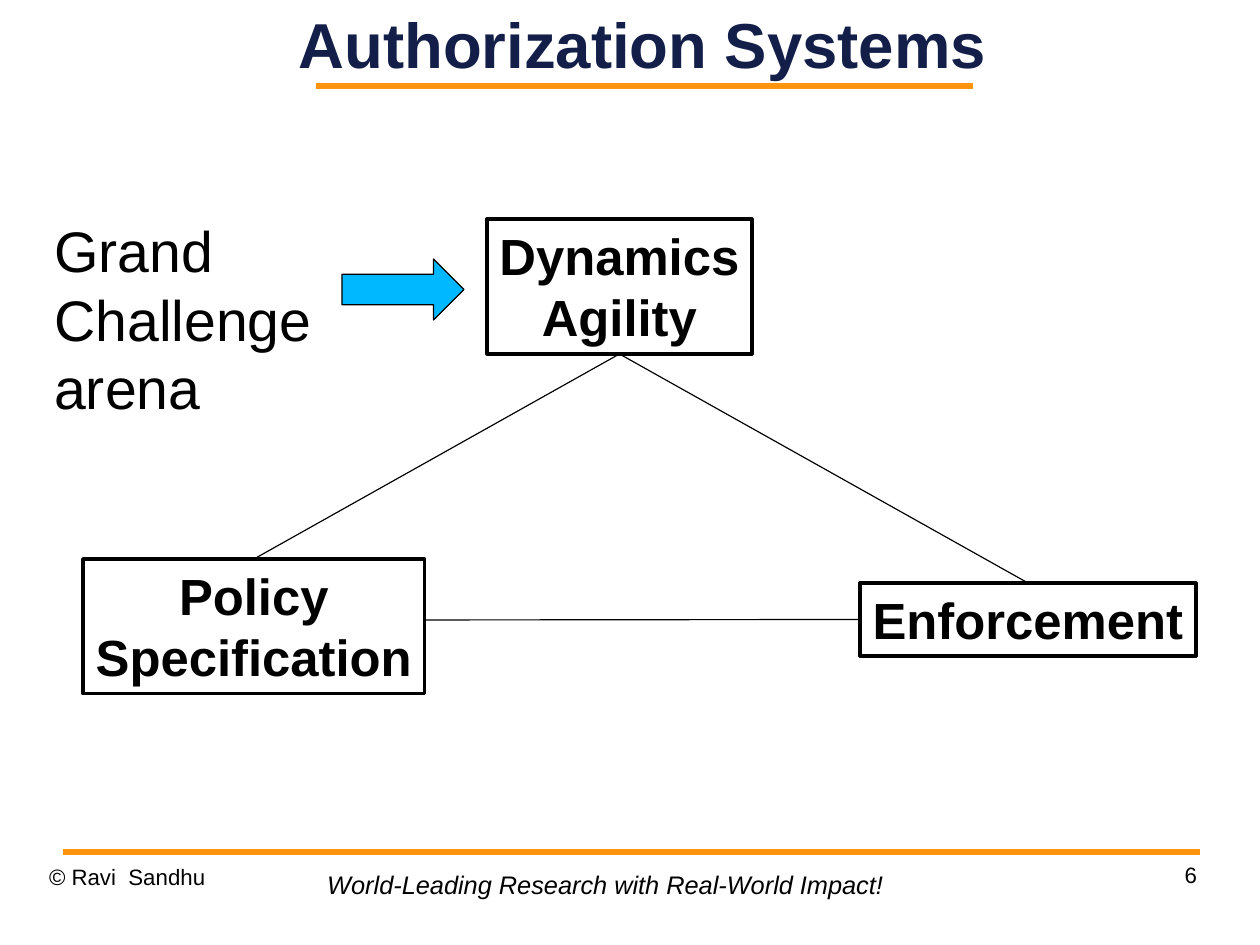
from dataclasses import dataclass

from lxml import etree
from pptx import Presentation
from pptx import util as u
from pptx.dml.color import RGBColor
from pptx.enum import shapes, text
from pptx.oxml.ns import qn


@dataclass(frozen=True)
class Theme:
    font: str = "Arial"
    navy: str = "131F49"
    orange: str = "FF950E"
    blue: str = "00B8FF"
    black: str = "000000"
    title: int = 40
    callout: int = 36
    node: int = 32
    motto: int = 16
    footer: int = 14
    rule: float = 4.31
    border: float = 2
    thin: float = 0.75


T = Theme()
PX = 8000  # EMU; the slide is 28 by 21 cm
WIDTH, HEIGHT = 1260, 945
LEFT, CENTER, RIGHT = text.PP_ALIGN.LEFT, text.PP_ALIGN.CENTER, text.PP_ALIGN.RIGHT
TOP_SIDE, LEFT_SIDE, BOTTOM_SIDE = 0, 1, 2

TITLE = ("Authorization Systems", (275, 0, 735, 86))
RULES = [(316, 973, 86), (63, 1200, 852)]  # left, right, y
NODES = {
    "policy": (["Policy", "Specification"], (83, 559, 342, 135)),
    "dynamics": (["Dynamics", "Agility"], (487, 219, 265, 135)),
    "enforcement": (["Enforcement"], (860, 583, 336, 73)),
}
EDGES = [
    ("dynamics", BOTTOM_SIDE, "enforcement", TOP_SIDE),
    ("dynamics", BOTTOM_SIDE, "policy", TOP_SIDE),
]
BASE_LINE = (425, 860, 620)  # left, right, y
CALLOUT = (["Grand", "Challenge", "arena"], (43, 210, 298, 219))
ARROW = (342, 259, 122, 61)
MOTTO = ("World-Leading Research with Real-World Impact!", (316, 863, 581, 42))
FOOTERS = [
    ("© Ravi  Sandhu", (49, 863, 294, 65), LEFT),
    ("6", (903, 861, 294, 65), RIGHT),
]


def emu(box):
    return [u.Emu(v * PX) for v in box]


def rgb(color):
    return RGBColor.from_string(color)


def write(s, lines, size, align=LEFT, color=T.black, bold=False, italic=False,
          wrap=True, inset=True, grow=True):
    tf = s.text_frame
    tf.word_wrap = wrap
    tf.auto_size = text.MSO_AUTO_SIZE.SHAPE_TO_FIT_TEXT if grow else text.MSO_AUTO_SIZE.NONE
    if not inset:
        tf.margin_left = tf.margin_top = tf.margin_right = tf.margin_bottom = 0
    tf.text = "\n".join(lines)
    for p in tf.paragraphs:
        p.alignment = align
        p.font.name, p.font.size = T.font, u.Pt(size)
        p.font.bold, p.font.italic = bold, italic
        p.font.color.rgb = rgb(color)


def outline(s, color, width):
    s.line.color.rgb = rgb(color)
    s.line.width = u.Pt(width)


def add_line(slide, x1, y1, x2, y2, color=T.black, width=T.thin):
    c = slide.shapes.add_connector(shapes.MSO_CONNECTOR.STRAIGHT, *emu((x1, y1, x2, y2)))
    outline(c, color, width)
    etree.SubElement(c._element.spPr, qn("a:effectLst"))
    return c


def add_title(slide):
    line, box = TITLE
    s = slide.shapes.title
    s.left, s.top, s.width, s.height = emu(box)
    write(s, [line], T.title, CENTER, T.navy, bold=True, inset=False, grow=False)
    s.text_frame.vertical_anchor = text.MSO_ANCHOR.MIDDLE


def add_node(slide, lines, box):
    s = slide.shapes.add_shape(shapes.MSO_SHAPE.RECTANGLE, *emu(box))
    s.shadow.inherit = False
    s.fill.background()
    outline(s, T.black, T.border)
    write(s, lines, T.node, CENTER, bold=True, wrap=False)
    s.text_frame.vertical_anchor = text.MSO_ANCHOR.TOP
    return s


def add_triangle(slide):
    nodes = {name: add_node(slide, *node) for name, node in NODES.items()}
    left, right, y = BASE_LINE
    add_line(slide, left, y, right, y).end_connect(nodes["enforcement"], LEFT_SIDE)
    for start, start_side, end, end_side in EDGES:
        c = add_line(slide, 0, 0, 0, 0)
        c.begin_connect(nodes[start], start_side)
        c.end_connect(nodes[end], end_side)


def add_callout(slide):
    lines, box = CALLOUT
    write(slide.shapes.add_textbox(*emu(box)), lines, T.callout)
    s = slide.shapes.add_shape(shapes.MSO_SHAPE.RIGHT_ARROW, *emu(ARROW))
    s.shadow.inherit = False
    s.fill.solid()
    s.fill.fore_color.rgb = rgb(T.blue)
    outline(s, T.black, T.thin)


def add_footer(slide):
    line, box = MOTTO
    write(slide.shapes.add_textbox(*emu(box)), [line], T.motto, italic=True, wrap=False)
    for line, box, align in FOOTERS:
        write(slide.shapes.add_textbox(*emu(box)), [line], T.footer, align,
              inset=False, grow=False)


def main():
    prs = Presentation()
    prs.slide_width, prs.slide_height = emu((WIDTH, HEIGHT))
    slide = prs.slides.add_slide(prs.slide_layouts.get_by_name("Title Only"))
    for left, right, y in RULES:
        add_line(slide, left, y, right, y, T.orange, T.rule)
    add_title(slide)
    add_footer(slide)
    add_triangle(slide)
    add_callout(slide)
    prs.save("out.pptx")


if __name__ == "__main__":
    main()
